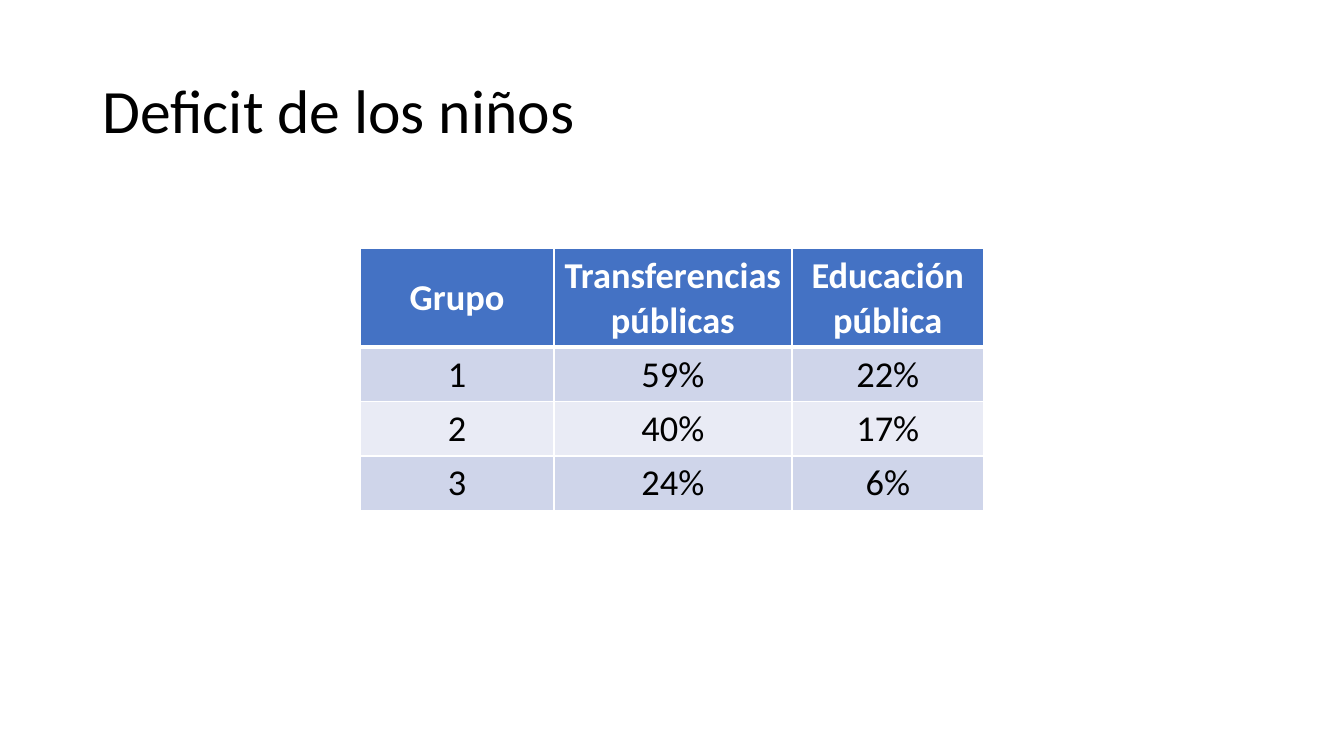
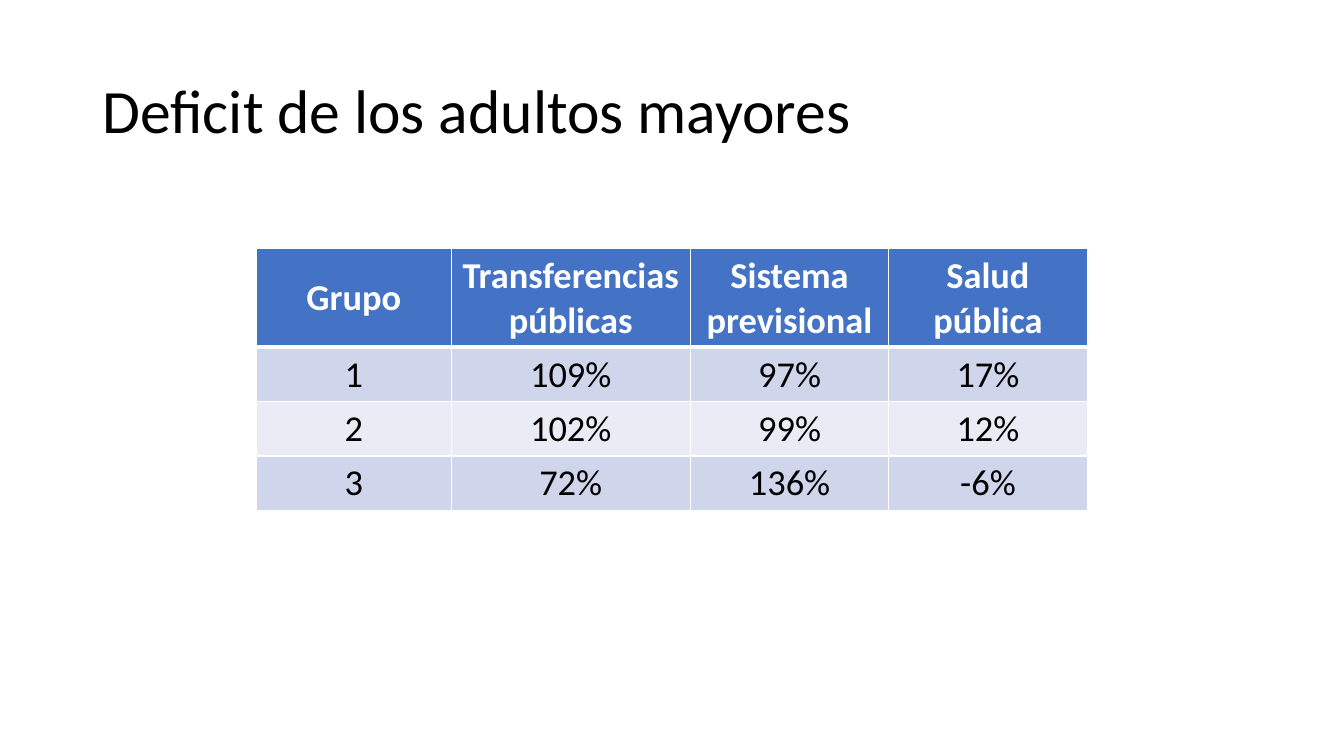
from dataclasses import dataclass

from lxml.etree import SubElement
from pptx import Presentation
from pptx.dml.color import RGBColor as RGB
from pptx.enum.text import MSO_ANCHOR as ANCHOR, PP_ALIGN as ALIGN
from pptx.oxml.ns import qn
from pptx.util import Cm, Pt


@dataclass(frozen=True)
class Theme:
    """Colours, type sizes and line widths shared by the slides."""
    font: str = "Calibri"
    title_size: int = 44
    table_size: int = 26
    text: str = "000000"
    header_text: str = "FFFFFF"
    header_fill: str = "4472C4"
    bands: tuple = ("CFD5EA", "E9EBF5")
    rule: str = "FFFFFF"
    thin: int = 1
    thick: int = 3


THEME = Theme()
WIDTH, HEIGHT = Cm(33.87), Cm(19.05)
TABLE_TOP, HEADER_HEIGHT, ROW_HEIGHT = Cm(6.27), Cm(2.48), Cm(1.37)

SLIDES = [
    {
        "title": "Deficit de los niños",
        "widths": [4.88, 6, 4.83],
        "rows": [
            ["Grupo", "Transferencias públicas", "Educación pública"],
            ["1", "59%", "22%"],
            ["2", "40%", "17%"],
            ["3", "24%", "6%"],
        ],
    },
    {
        "title": "Deficit de los adultos mayores",
        "widths": [4.9, 6.03, 5, 5],
        "rows": [
            ["Grupo", "Transferencias públicas", "Sistema previsional", "Salud pública"],
            ["1", "109%", "97%", "17%"],
            ["2", "102%", "99%", "12%"],
            ["3", "72%", "136%", "-6%"],
        ],
    },
]


def apply(target, **values):
    """Set each named format value on the target."""
    for name, value in values.items():
        setattr(target, name, value)


def write(tf, text, size, color, bold=False, **paragraph):
    """Write one formatted run into the first paragraph of a text frame."""
    p = tf.paragraphs[0]
    apply(p, **paragraph)
    r = p.add_run()
    r.text = text
    apply(r.font, name=THEME.font, size=Pt(size), bold=bold)
    r.font.color.rgb = RGB.from_string(color)


def add_title(s, text):
    """Add the slide title."""
    tf = s.shapes.add_textbox(Cm(2.33), Cm(1.01), Cm(29.21), Cm(3.68)).text_frame
    apply(tf, word_wrap=True, vertical_anchor=ANCHOR.MIDDLE)
    write(tf, text, THEME.title_size, THEME.text, line_spacing=0.9)


def set_borders(cell, **widths):
    """Draw the cell borders with the given widths in points."""
    props = cell._tc.get_or_add_tcPr()
    for side in ("L", "R", "T", "B"):
        width = Pt(widths.get(side, THEME.thin))
        line = SubElement(props, qn(f"a:ln{side}"), w=str(width))
        fill = SubElement(line, qn("a:solidFill"))
        SubElement(fill, qn("a:srgbClr"), val=THEME.rule)


def format_cell(cell, text, row):
    """Fill a cell as a header or as part of a banded body row."""
    header = row == 0
    cell.vertical_anchor = ANCHOR.MIDDLE
    set_borders(cell, **{0: {"B": THEME.thick}, 1: {"T": THEME.thick}}.get(row, {}))
    cell.fill.solid()
    fill = THEME.header_fill if header else THEME.bands[(row - 1) % 2]
    cell.fill.fore_color.rgb = RGB.from_string(fill)
    color = THEME.header_text if header else THEME.text
    write(cell.text_frame, text, THEME.table_size, color, header, alignment=ALIGN.CENTER)


def add_data_table(s, rows, widths):
    """Add a horizontally centred table with a header row."""
    widths = [Cm(w) for w in widths]
    heights = [HEADER_HEIGHT] + [ROW_HEIGHT] * (len(rows) - 1)
    total = sum(widths)
    left = (WIDTH - total) // 2
    table = s.shapes.add_table(
        len(rows), len(widths), left, TABLE_TOP, total, sum(heights)
    ).table
    for column, width in zip(table.columns, widths):
        column.width = width
    for i, (values, height) in enumerate(zip(rows, heights)):
        table.rows[i].height = height
        for j, text in enumerate(values):
            format_cell(table.cell(i, j), text, i)


def main():
    """Build and save the presentation."""
    prs = Presentation()
    apply(prs, slide_width=WIDTH, slide_height=HEIGHT)
    for content in SLIDES:
        s = prs.slides.add_slide(prs.slide_layouts[6])
        add_title(s, content["title"])
        add_data_table(s, content["rows"], content["widths"])
    prs.save("out.pptx")


if __name__ == "__main__":
    main()
